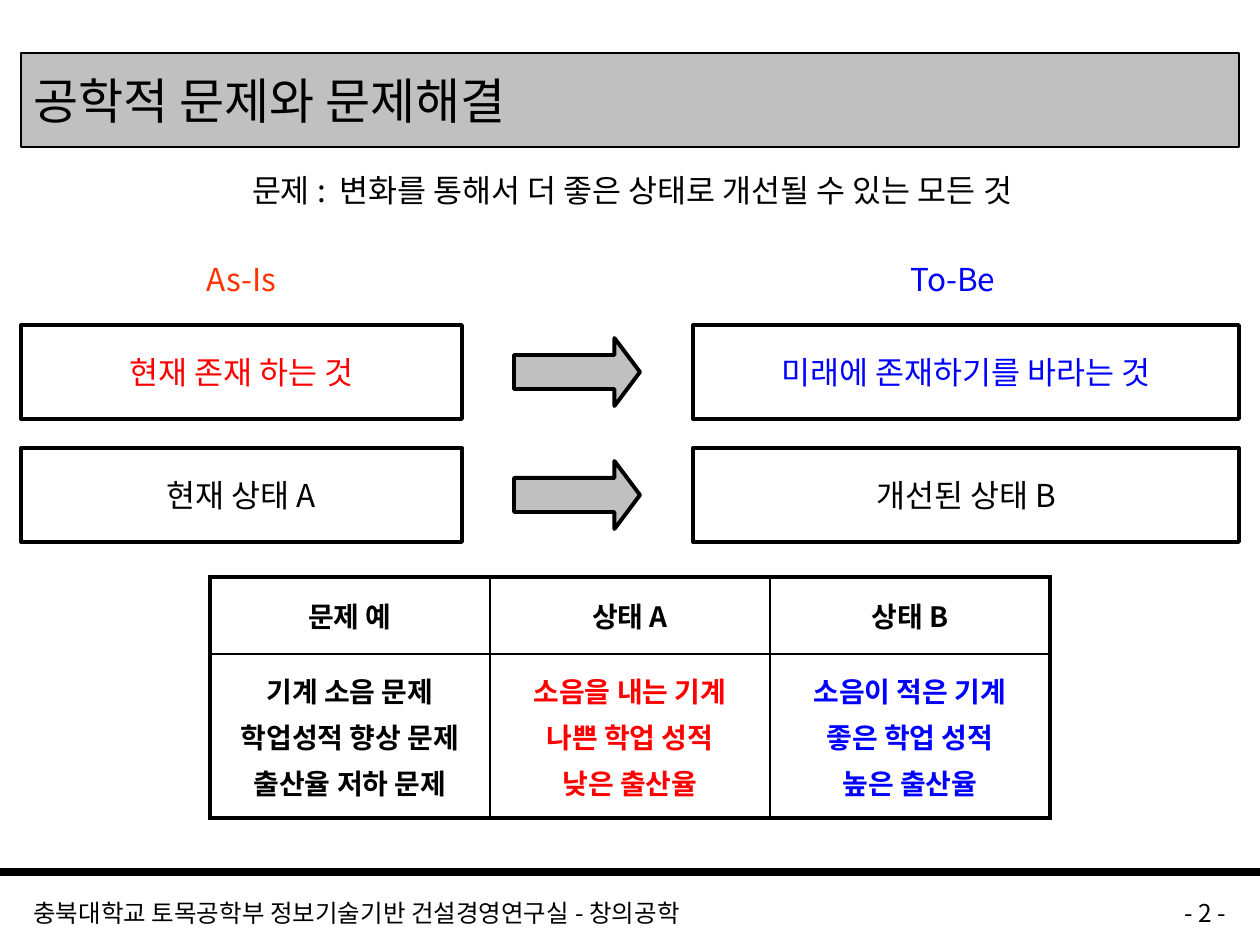
from lxml import etree
from pptx import Presentation
from pptx.dml.color import RGBColor
from pptx.enum.shapes import MSO_CONNECTOR, MSO_SHAPE
from pptx.enum.text import MSO_ANCHOR, PP_ALIGN
from pptx.oxml.ns import qn
from pptx.util import Pt

SCALE = 914400 / 126
RECTANGLE, ARROW = MSO_SHAPE.RECTANGLE, MSO_SHAPE.RIGHT_ARROW
STRAIGHT = MSO_CONNECTOR.STRAIGHT
LEFT, CENTER, RIGHT = PP_ALIGN.LEFT, PP_ALIGN.CENTER, PP_ALIGN.RIGHT
TOP, MIDDLE = MSO_ANCHOR.TOP, MSO_ANCHOR.MIDDLE
FONT = "Noto Sans CJK KR"
COLORS = {
    "black": "000000",
    "gray": "C0C0C0",
    "red": "FF0000",
    "orange": "FF3300",
    "blue": "0000FF",
}


def emu(*lengths):
    return [round(length * SCALE) for length in lengths]


def color(name):
    return RGBColor.from_string(COLORS[name])


class SlideBuilder:
    def __init__(self, slide, font):
        self.slide = slide
        self.font = font

    def set_lines(self, frame, lines, size, ink="black", align=CENTER, bold=False, before=0):
        frame.text = "\n".join(lines)
        for paragraph in frame.paragraphs:
            paragraph.alignment = align
            paragraph.space_before = Pt(before)
            run = paragraph.runs[0]
            formats = {"name": self.font, "size": Pt(size), "bold": bold}
            for attribute, value in formats.items():
                setattr(run.font, attribute, value)
            run.font.color.rgb = color(ink)
            properties = run._r.get_or_add_rPr()
            etree.SubElement(properties, qn("a:ea")).set("typeface", self.font)

    def text(self, box, line, size=18, ink="black", align=CENTER, wrap=False):
        shape = self.slide.shapes.add_textbox(*emu(*box))
        self.set_lines(shape.text_frame, [line], size, ink, align)
        formats = {"word_wrap": wrap, "vertical_anchor": TOP}
        for attribute, value in formats.items():
            setattr(shape.text_frame, attribute, value)

    def shape(self, kind, box, fill=None, width=2.25):
        shape = self.slide.shapes.add_shape(kind, *emu(*box))
        shape.shadow.inherit = False
        if fill:
            shape.fill.solid()
            shape.fill.fore_color.rgb = color(fill)
        else:
            shape.fill.background()
        shape.line.color.rgb = color("black")
        shape.line.width = Pt(width)
        return shape

    def box(self, box, line, size=18, ink="black", align=CENTER, wrap=False, **style):
        shape = self.shape(RECTANGLE, box, **style)
        self.set_lines(shape.text_frame, [line], size, ink, align)
        formats = {"word_wrap": wrap, "vertical_anchor": MIDDLE}
        for attribute, value in formats.items():
            setattr(shape.text_frame, attribute, value)

    def arrow(self, box):
        shape = self.shape(ARROW, box, fill="gray")
        shape.adjustments[0] = 0.5
        shape.adjustments[1] = 0.375

    def rule(self, start, end, width):
        connector = self.slide.shapes.add_connector(STRAIGHT, *emu(*start, *end))
        connector.line.color.rgb = color("black")
        connector.line.width = Pt(width)
        etree.SubElement(connector._element.spPr, qn("a:effectLst"))

    def border(self, cell, side, width):
        properties = cell._tc.get_or_add_tcPr()
        line = etree.SubElement(properties, qn(f"a:ln{side}"), w=str(int(Pt(width))))
        fill = etree.SubElement(line, qn("a:solidFill"))
        etree.SubElement(fill, qn("a:srgbClr"), val=COLORS["black"])

    def table(self, box, heights, rows, inks):
        row_count, column_count = len(rows), len(rows[0])
        frame = self.slide.shapes.add_table(row_count, column_count, *emu(*box))
        table = frame.table
        table.first_row = table.horz_banding = False
        for row, height in zip(table.rows, heights):
            row.height = emu(height)[0]
        for r, row in enumerate(rows):
            for c, lines in enumerate(row):
                cell = table.cell(r, c)
                cell.vertical_anchor = MIDDLE
                outer = {
                    "L": c == 0,
                    "R": c == column_count - 1,
                    "T": r == 0,
                    "B": r == row_count - 1,
                }
                for side, is_outer in outer.items():
                    self.border(cell, side, 2.25 if is_outer else 1)
                cell.fill.background()
                self.set_lines(cell.text_frame, lines, 16, inks[r][c], bold=True, before=3.2)


def main():
    presentation = Presentation()
    presentation.slide_width, presentation.slide_height = emu(1260, 945)
    slide = presentation.slides.add_slide(presentation.slide_layouts[6])
    builder = SlideBuilder(slide, FONT)

    builder.rule((0, 872), (1260, 872), 4.5)
    builder.text((21, 892, 987, 32), "충북대학교 토목공학부 정보기술기반 건설경영연구실 - 창의공학",
                 14, align=LEFT, wrap=True)
    builder.text((1029, 892, 210, 32), "- 2 -", 14, align=RIGHT, wrap=True)
    builder.box((21, 53, 1218, 94), "공학적 문제와 문제해결", 28,
                align=LEFT, wrap=True, fill="gray", width=0.75)

    builder.text((186, 165, 892, 50), "문제 :  변화를 통해서 더 좋은 상태로 개선될 수 있는 모든 것")
    builder.text((176, 254, 131, 51), "As-Is", ink="orange")
    builder.text((893, 254, 120, 51), "To-Be", ink="blue")

    states = [
        (325, "현재 존재 하는 것", "red", "미래에 존재하기를 바라는 것", "blue"),
        (448, "현재 상태 A", "black", "개선된 상태 B", "black"),
    ]
    for top, current, current_ink, improved, improved_ink in states:
        builder.box((21, top, 441, 94), current, ink=current_ink)
        builder.box((693, top, 546, 94), improved, ink=improved_ink)
        builder.arrow((514, top + 13, 126, 68))

    rows = [
        [["문제 예"], ["상태 A"], ["상태 B"]],
        [
            ["기계 소음 문제", "학업성적 향상 문제", "출산율 저하 문제"],
            ["소음을 내는 기계", "나쁜 학업 성적", "낮은 출산율"],
            ["소음이 적은 기계", "좋은 학업 성적", "높은 출산율"],
        ],
    ]
    inks = [["black"] * 3, ["black", "red", "blue"]]
    builder.table((210, 577, 840, 241), [77, 164], rows, inks)

    presentation.save("out.pptx")


if __name__ == "__main__":
    main()
